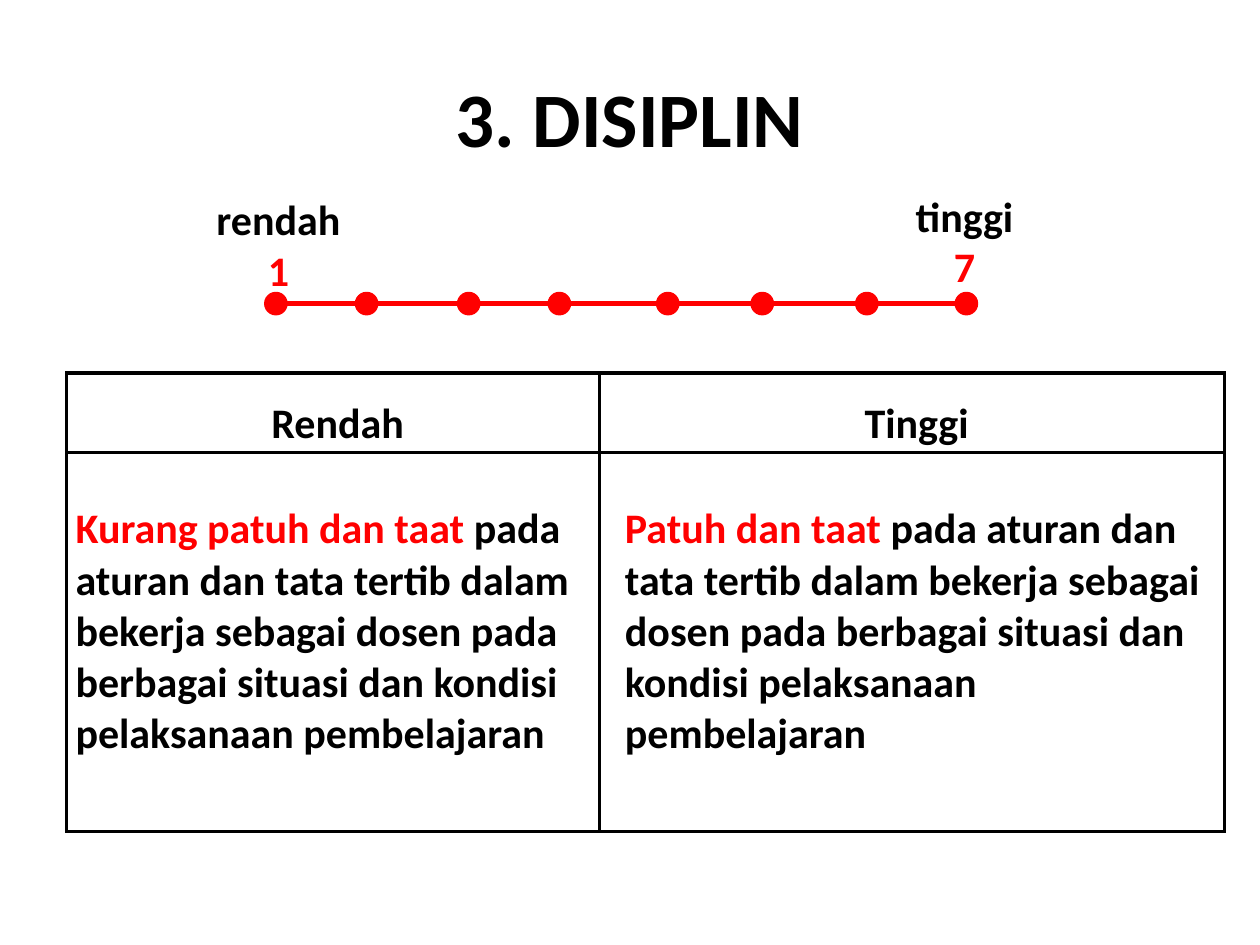
import pptx
import pptx.util
import pptx.dml.color
import pptx.enum.shapes
import pptx.enum.text
import pptx.oxml
import pptx.oxml.ns
import lxml.etree

Inches = pptx.util.Inches
Pt = pptx.util.Pt
ALIGN = pptx.enum.text.PP_ALIGN
ANCHOR = pptx.enum.text.MSO_ANCHOR
COLORS = {"text": "000000", "accent": "FF0000", "paper": "FFFFFF"}
FONT = {"name": "Calibri", "bold": True}
NO_MARGINS = {"margin_left": 0, "margin_top": 0, "margin_right": 0, "margin_bottom": 0}


def rgb(key):
    return pptx.dml.color.RGBColor.from_string(COLORS[key])


def apply(obj, values):
    for name, value in values.items():
        setattr(obj, name, value)


def write(tf, paragraphs, size=24, **formats):
    for i, runs in enumerate(paragraphs):
        p = tf.paragraphs[0] if i == 0 else tf.add_paragraph()
        apply(p, formats)
        for text, color in runs:
            r = p.add_run()
            r.text = text
            apply(r.font, {**FONT, "size": Pt(size)})
            r.font.color.rgb = rgb(color)


def add_text(shapes, box, paragraphs, size=24, wrap=True, anchor=ANCHOR.TOP):
    tf = shapes.add_textbox(*map(Inches, box)).text_frame
    apply(tf, {"word_wrap": wrap, "vertical_anchor": anchor})
    write(tf, paragraphs, size, alignment=ALIGN.CENTER)


def add_title(s, box):
    add_text(s.shapes, box, [[("3. DISIPLIN", "text")]], 44, anchor=ANCHOR.MIDDLE)


def add_scale(s, box):
    left, top, width, height = box
    shapes = s.shapes.add_group_shape().shapes
    dot = 0.16
    dot_top = top + height - dot
    y = Inches(dot_top + dot / 2)
    line = shapes.add_connector(pptx.enum.shapes.MSO_CONNECTOR.STRAIGHT,
                                Inches(left + 0.56), y, Inches(left + 6.01), y)
    line.line.color.rgb = rgb("accent")
    line.line.width = Pt(3)
    lxml.etree.SubElement(line._element.spPr, pptx.oxml.ns.qn("a:effectLst"))
    for x in (0.5, 1.22, 2.03, 2.75, 3.61, 4.36, 5.19, 5.98):
        sp = shapes.add_shape(pptx.enum.shapes.MSO_SHAPE.FLOWCHART_CONNECTOR,
                              *map(Inches, (left + x, dot_top, dot, dot)))
        sp.shadow.inherit = False
        sp.fill.solid()
        sp.fill.fore_color.rgb = rgb("accent")
        sp.line.color.rgb = rgb("accent")
        sp.line.width = Pt(2)
    for x, y, w, label, value in ((0, 0.03, 1.2, "rendah", "1"),
                                  (width - 0.99, 0, 0.99, "tinggi", "7")):
        add_text(shapes, (left + x, top + y, w, 0.91),
                 [[(label, "text")], [(value, "accent")]], wrap=False)


def add_borders(cell):
    tc_pr = cell._tc.get_or_add_tcPr()
    for side in ("lnL", "lnR", "lnT", "lnB"):
        tc_pr.append(pptx.oxml.parse_xml(
            f'<a:{side} {pptx.oxml.ns.nsdecls("a")} w="{Pt(2.25)}"><a:solidFill>'
            f'<a:srgbClr val="{COLORS["text"]}"/></a:solidFill></a:{side}>'))


def add_comparison(s, box):
    table = s.shapes.add_table(2, 2, *map(Inches, box)).table
    apply(table, {"first_row": False, "horz_banding": False})
    for column, width in zip(table.columns, (4.23, 4.96)):
        column.width = Inches(width)
    for row, height in zip(table.rows, (0.63, 3.01)):
        row.height = Inches(height)
    contents = (
        ("Rendah", 0.07, [
            [("Kurang patuh dan taat ", "accent"),
             ("pada aturan dan tata tertib dalam bekerja sebagai dosen pada", "text")],
            [("berbagai situasi dan kondisi pelaksanaan pembelajaran", "text")]]),
        ("Tinggi", 0.2, [
            [("Patuh dan taat ", "accent"),
             ("pada aturan dan tata tertib dalam bekerja sebagai dosen pada "
              "berbagai situasi dan kondisi pelaksanaan pembelajaran", "text")]]),
    )
    for col, (heading, indent, body) in enumerate(contents):
        header, detail = table.cell(0, col), table.cell(1, col)
        for cell in (header, detail):
            apply(cell, NO_MARGINS)
            add_borders(cell)
            cell.fill.solid()
            cell.fill.fore_color.rgb = rgb("paper")
        header.margin_left = Inches(0.07)
        apply(detail, {"margin_left": Inches(indent), "margin_top": Inches(0.41)})
        write(header.text_frame, [[(heading, "text")]],
              alignment=ALIGN.CENTER, line_spacing=1.5)
        write(detail.text_frame, body, alignment=ALIGN.LEFT)


def main():
    prs = pptx.Presentation()
    apply(prs, {"slide_width": Inches(10), "slide_height": Inches(7.5)})
    s = prs.slides.add_slide(prs.slide_layouts[6])
    add_title(s, (0.5, 0.3, 9, 1.25))
    add_comparison(s, (0.53, 2.96, 9.19, 3.64))
    add_scale(s, (1.61, 1.46, 6.54, 1.03))
    prs.save("out.pptx")


if __name__ == "__main__":
    main()
